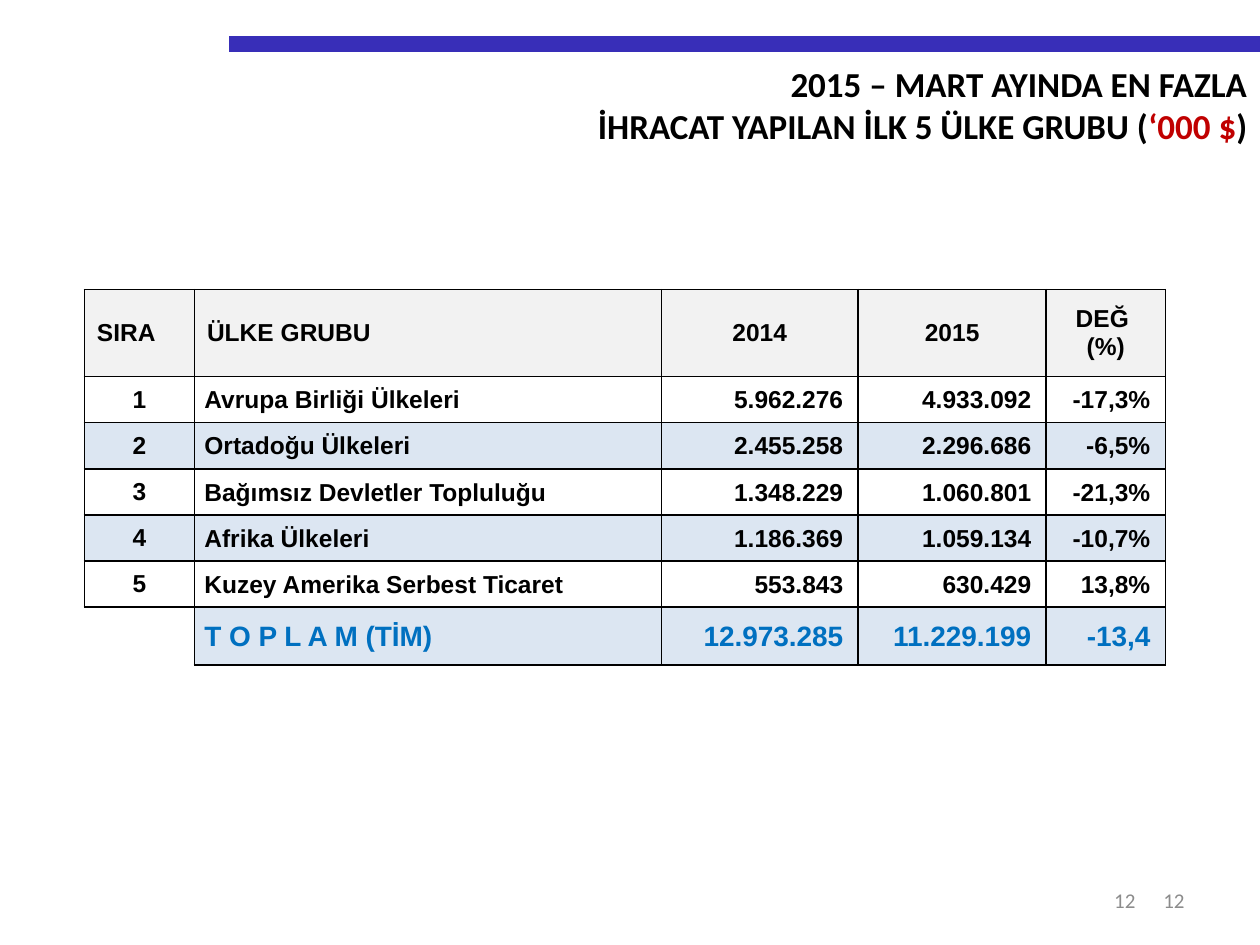
from lxml import etree
from pptx import Presentation, util as u
from pptx.dml.color import RGBColor
from pptx.enum import shapes, text
from pptx.oxml import ns

LEFT, CENTER, RIGHT = text.PP_ALIGN.LEFT, text.PP_ALIGN.CENTER, text.PP_ALIGN.RIGHT
HEADER_FILL, BAND_FILL = "F2F2F2", "DCE6F2"
COLUMN_WIDTHS = [2.22, 9.41, 3.97, 3.79, 2.4]
ROW_HEIGHTS = [1.75] + [0.93] * 5 + [1.17]
ROWS = [
    ["SIRA", "ÜLKE GRUBU", "2014", "2015", "DEĞ \n(%)"],
    ["1", "Avrupa Birliği Ülkeleri", "5.962.276", "4.933.092", "-17,3%"],
    ["2", "Ortadoğu Ülkeleri", "2.455.258", "2.296.686", "-6,5%"],
    ["3", "Bağımsız Devletler Topluluğu", "1.348.229", "1.060.801", "-21,3%"],
    ["4", "Afrika Ülkeleri", "1.186.369", "1.059.134", "-10,7%"],
    ["5", "Kuzey Amerika Serbest Ticaret", "553.843", "630.429", "13,8%"],
    ["", "T O P L A M (TİM)", "12.973.285", "11.229.199", "-13,4"],
]


def rgb(value):
    return RGBColor.from_string(value)


def apply(target, formats):
    for name, value in formats.items():
        setattr(target, name, value)


def set_font(font, size, color, name, bold=True):
    apply(font, {"size": u.Pt(size), "name": name, "bold": bold})
    font.color.rgb = rgb(color)


def add_rule(slide):
    rule = slide.shapes.add_connector(
        shapes.MSO_CONNECTOR.STRAIGHT, u.Cm(4.62), u.Cm(0.89), u.Cm(25.4), u.Cm(0.89))
    rule.line.color.rgb = rgb("382EB8")
    rule.line.width = u.Pt(9)
    etree.SubElement(rule._element.spPr, ns.qn("a:effectLst"))


def add_title(slide, lines):
    title = slide.shapes.title
    apply(title, {"left": u.Cm(2.69), "top": u.Cm(1.14),
                  "width": u.Cm(22.71), "height": u.Cm(1.96)})
    frame = title.text_frame
    apply(frame, {"word_wrap": True, "auto_size": text.MSO_AUTO_SIZE.NONE,
                  "vertical_anchor": text.MSO_ANCHOR.TOP})
    for index, runs in enumerate(lines):
        paragraph = frame.add_paragraph() if index else frame.paragraphs[0]
        paragraph.alignment = RIGHT
        for words, color in runs:
            run = paragraph.add_run()
            run.text = words
            set_font(run.font, 20, color, "Calibri")


def add_page_number(slide, left, width):
    box = slide.shapes.add_textbox(u.Cm(left), u.Cm(17.65), u.Cm(width), u.Cm(1.01))
    apply(box.text_frame, {"word_wrap": True, "vertical_anchor": text.MSO_ANCHOR.MIDDLE})
    paragraph = box.text_frame.paragraphs[0]
    apply(paragraph, {"text": "12", "alignment": RIGHT})
    set_font(paragraph.font, 12, "8C8C8C", "Calibri", bold=False)


def set_borders(cell, visible):
    properties = cell._tc.get_or_add_tcPr()
    for index, side in enumerate("LRTB"):
        line = etree.Element(ns.qn("a:ln" + side), w=str(u.Pt(1)))
        if side in visible:
            fill = etree.SubElement(line, ns.qn("a:solidFill"))
            etree.SubElement(fill, ns.qn("a:srgbClr"), val="000000")
        else:
            etree.SubElement(line, ns.qn("a:noFill"))
        properties.insert(index, line)


def format_cell(cell, row, column):
    header, total = row == 0, row == len(ROWS) - 1
    corner = total and column == 0
    # Fill and borders
    if corner or row % 2 and not header:
        cell.fill.background()
    else:
        cell.fill.solid()
        cell.fill.fore_color.rgb = rgb(HEADER_FILL if header else BAND_FILL)
    set_borders(cell, "RT" if corner else "LRTB")
    # Margins: the header and the rank column keep the defaults
    cell.vertical_anchor = text.MSO_ANCHOR.MIDDLE
    if not header and column:
        left, right = (0.2, 0.03) if column == 1 else (0.03, 0.3)
        apply(cell, {"margin_left": u.Cm(left), "margin_right": u.Cm(right),
                     "margin_top": u.Cm(0.03), "margin_bottom": u.Cm(0)})
    # Text
    if header:
        alignment = LEFT if column < 2 else CENTER
    else:
        alignment = [CENTER, LEFT, RIGHT, RIGHT, RIGHT][column]
    cell.text = ROWS[row][column]
    for paragraph in cell.text_frame.paragraphs:
        paragraph.alignment = alignment
        set_font(paragraph.font, 16 if total else 14,
                 "0070C0" if total else "000000", "Arial")


def add_export_table(slide):
    table = slide.shapes.add_table(
        len(ROWS), len(COLUMN_WIDTHS), u.Cm(1.7), u.Cm(5.84),
        u.Cm(sum(COLUMN_WIDTHS)), u.Cm(sum(ROW_HEIGHTS))).table
    apply(table, {"first_row": False, "horz_banding": False})
    for column, width in zip(table.columns, COLUMN_WIDTHS):
        column.width = u.Cm(width)
    for row, height in zip(table.rows, ROW_HEIGHTS):
        row.height = u.Cm(height)
    for row in range(len(ROWS)):
        for column in range(len(COLUMN_WIDTHS)):
            format_cell(table.cell(row, column), row, column)


def main():
    presentation = Presentation()
    apply(presentation, {"slide_width": u.Cm(25.4), "slide_height": u.Cm(19.05)})
    slide = presentation.slides.add_slide(presentation.slide_layouts[5])
    add_rule(slide)
    add_title(slide, [
        [("2015 – MART AYINDA EN FAZLA", "000000")],
        [("İHRACAT YAPILAN İLK 5 ÜLKE GRUBU (", "000000"),
         ("‘000 $", "C00000"), (")", "000000")],
    ])
    add_export_table(slide)
    # Page numbers
    add_page_number(slide, 18.21, 5.92)
    add_page_number(slide, 17.81, 5.33)
    presentation.save("out.pptx")


if __name__ == "__main__":
    main()
